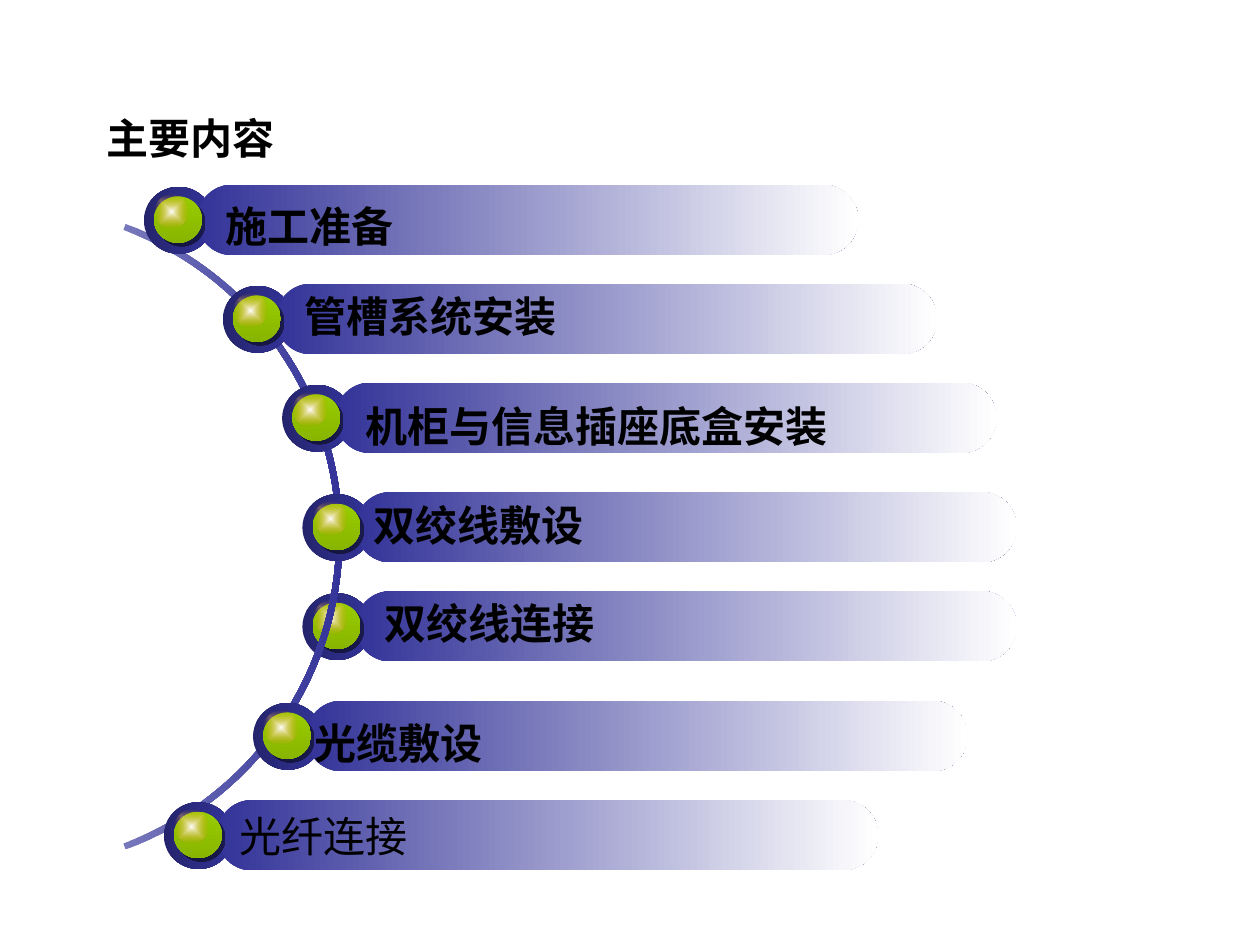
import math
from lxml import etree
from pptx import Presentation
from pptx.dml.color import RGBColor
from pptx.enum import shapes, text
from pptx.oxml import parse_xml
from pptx.oxml.ns import nsdecls, qn
from pptx.util import Pt

COLORS = {"navy": "24246D", "blue": "333399", "haze": "7777BB", "white": "FFFFFF",
          "lime": "99CC00", "moss": "88B500", "amber": "E9940B", "black": "000000"}


def write(tf, content, font="Times New Roman", size=24, bold=True, color="black"):
    tf.word_wrap = True
    tf.auto_size = text.MSO_AUTO_SIZE.NONE
    tf.vertical_anchor = text.MSO_ANCHOR.MIDDLE
    tf.margin_top = tf.margin_bottom = 0
    p = tf.paragraphs[0]
    p.alignment = text.PP_ALIGN.LEFT
    r = p.add_run()
    r.text = content
    r.font.name = font
    r.font.size = Pt(size)
    r.font.bold = bold
    r.font.color.rgb = RGBColor.from_string(COLORS[color])


def paint(sp, start, end, angle=0):
    sp.shadow.inherit = False
    sp.line.fill.background()
    sp.fill.gradient()
    sp.fill.gradient_angle = angle
    for stop, name, position in zip(sp.fill.gradient_stops, (start, end), (0, 1)):
        stop.color.rgb = RGBColor.from_string(COLORS[name])
        stop.position = position


prs = Presentation()
prs.slide_width, prs.slide_height = Pt(720), Pt(540)
s = prs.slides.add_slide(prs.slide_layouts[6])

ROWS = {
    "双绞线连接": (172.8, 337.8),
    "管槽系统安装": (127.3, 162.2),
    "机柜与信息插座底盒安装": (161.2, 218.7),
    "双绞线敷设": (172.8, 281.2),
    "光缆敷设": (144.6, 400.5),
    "施工准备": (82.2, 105.6),
    "光纤连接": (93.6, 457.2),
}
LABELS = {
    "机柜与信息插座底盒安装": (201.6, 230.4),
    "双绞线连接": (212.4, 343.4),
    "管槽系统安装": (167, 167.8),
    "施工准备": (121.7, 116.6),
    "双绞线敷设": (206.6, 287.3),
    "光缆敷设": (172.8, 411.5),
}
PARTS = [
    ("ring", shapes.MSO_SHAPE.OVAL, 0, 1.2, 39.6, 38.2, "navy", "blue", 0),
    ("bar", shapes.MSO_SHAPE.ROUNDED_RECTANGLE, 30.2, 0, 378, 40.2, "blue", "white", 0),
    ("bead", shapes.MSO_SHAPE.OVAL, 5.8, 6.6, 27.4, 26.6, "lime", "moss", 270),
    ("glow", shapes.MSO_SHAPE.OVAL, 6.3, 5.6, 19.4, 19.4, "white", "amber", 0),
]

for i, (topic, (left, top)) in enumerate(ROWS.items()):
    group = s.shapes.add_group_shape()
    for part, preset, dx, dy, w, h, start, end, angle in PARTS:
        sp = group.shapes.add_shape(preset, Pt(left + dx), Pt(top + dy), Pt(w), Pt(h))
        paint(sp, start, end, angle)
        pr = sp._element.spPr
        if part == "bar":
            sp.adjustments[0] = 0.5
            if topic not in LABELS:
                write(sp.text_frame, topic, bold=False)
        elif part == "bead":
            pr.find(qn("a:effectLst")).append(parse_xml(
                f'<a:outerShdw {nsdecls("a")} dist="{Pt(2.8)}" dir="2700000" algn="ctr" rotWithShape="0">'
                f'<a:srgbClr val="{COLORS["black"]}"><a:alpha val="50000"/></a:srgbClr></a:outerShdw>'))
        elif part == "glow":
            grad = pr.find(qn("a:gradFill"))
            etree.SubElement(grad.findall(".//" + qn("a:srgbClr"))[-1], qn("a:alpha"), val="0")
            grad.replace(grad.find(qn("a:lin")), parse_xml(
                f'<a:path {nsdecls("a")} path="shape">'
                '<a:fillToRect l="50000" t="50000" r="50000" b="50000"/></a:path>'))

    if i == 0:
        angles = [math.radians(-69.5 + 139 * k / 60) for k in range(61)]
        edge = [(5 + radius * math.cos(a), 306.7 + radius * math.sin(a))
                for radius, sweep in ((187.2, angles), (190.8, angles[::-1])) for a in sweep]
        builder = s.shapes.build_freeform(Pt(edge[0][0]), Pt(edge[0][1]))
        builder.add_line_segments([(Pt(x), Pt(y)) for x, y in edge[1:]])
        paint(builder.convert_to_shape(), "haze", "blue")

title = s.shapes.add_textbox(Pt(54), Pt(65.5), Pt(136), Pt(26))
write(title.text_frame, "主要内容", font="Arial")

for topic, (left, top) in LABELS.items():
    label = s.shapes.add_textbox(Pt(left), Pt(top), Pt(367.2), Pt(25.2))
    write(label.text_frame, topic)

prs.save("out.pptx")
